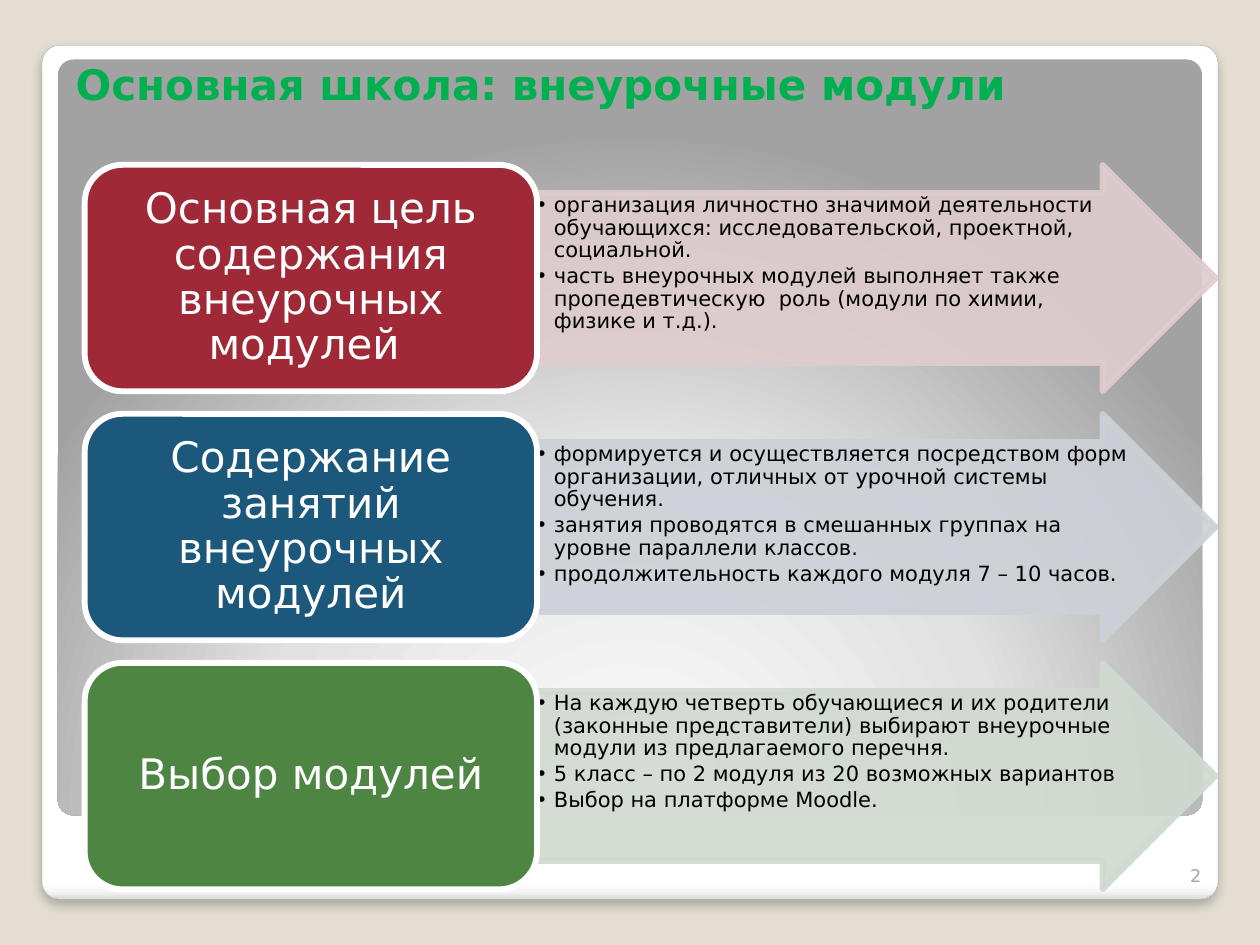
import dataclasses

import lxml.etree
import pptx
import pptx.dml.color
import pptx.enum.shapes
import pptx.enum.text
import pptx.oxml.ns
import pptx.util

Pt = pptx.util.Pt
KIND = pptx.enum.shapes.MSO_SHAPE
ALIGN = pptx.enum.text.PP_ALIGN
ANCHOR = pptx.enum.text.MSO_ANCHOR
qn = pptx.oxml.ns.qn


@dataclasses.dataclass
class Theme:
    font: str = "DejaVu Sans"
    back: str = "E3DED1"
    title: str = "00B050"
    ink: str = "000000"
    light: str = "FFFFFF"
    edge: str = "A4A4A4"
    faint: str = "A8A49B"
    large: int = 24
    small: int = 12
    tiny: int = 10
    stroke: float = 3.35
    card: tuple = ((0, "FFFFFF"), (98, "FFFFFF"), (99, "F7F7F7"), (100, "DADADA"))
    panel: tuple = ((0, "FFFFFF"), (55, "E1E1E1"), (100, "A2A2A2"))


def rgb(code):
    return pptx.dml.color.RGBColor.from_string(code)


def node(parent, tag, **attrs):
    child = lxml.etree.SubElement(parent, qn(tag))
    for key, value in attrs.items():
        child.set(key, str(value))
    return child


def write(frame, *lines, font, size, color, bold=False, align=ALIGN.LEFT,
          anchor=ANCHOR.TOP, inset=(7.2, 3.6), space=1, after=0, bullet=None, indent=0):
    """Fill a text frame with one paragraph for each line."""
    frame.word_wrap = True
    frame.auto_size = pptx.enum.text.MSO_AUTO_SIZE.NONE
    frame.vertical_anchor = anchor
    frame.margin_left = frame.margin_right = Pt(inset[0])
    frame.margin_top = frame.margin_bottom = Pt(inset[1])
    for index, line in enumerate(lines):
        para = frame.paragraphs[0] if index == 0 else frame.add_paragraph()
        if bullet:
            para.level = 1
            props = para._p.get_or_add_pPr()
            props.set("marL", str(Pt(indent)))
            props.set("indent", str(-Pt(indent)))
            node(props, "a:buChar", char=bullet)
        para.alignment = align
        para.line_spacing = space
        para.space_before = Pt(0)
        para.space_after = Pt(after)
        run = para.add_run()
        run.text = line
        run.font.name = font
        run.font.size = Pt(size)
        run.font.bold = bold
        run.font.color.rgb = rgb(color)


class Deck:
    def __init__(self, theme):
        self.theme = theme
        self.file = pptx.Presentation()
        self.file.slide_width, self.file.slide_height = Pt(720), Pt(540)
        # The comparison layout offers a title and several body holders
        self.slide = self.file.slides.add_slide(self.file.slide_layouts[4])
        self.slide.background.fill.solid()
        self.slide.background.fill.fore_color.rgb = rgb(theme.back)

    def shape(self, kind, area, fill=None, line=None, width=0, adjust=(), alpha=None):
        item = self.slide.shapes.add_shape(kind, *map(Pt, area))
        item.shadow.inherit = False
        for index, value in enumerate(adjust):
            item.adjustments[index] = value
        if fill:
            item.fill.solid()
            item.fill.fore_color.rgb = rgb(fill)
        else:
            item.fill.background()
        if line:
            item.line.color.rgb = rgb(line)
            item.line.width = Pt(width)
        else:
            item.line.fill.background()
        if alpha:
            for color in item._element.spPr.iter(qn("a:srgbClr")):
                node(color, "a:alpha", val=alpha * 1000)
        return item

    def blend(self, item, stops, focus=None):
        """Swap the empty fill for a gradient, downward or round a focus."""
        blank = item._element.spPr.find(qn("a:noFill"))
        grad = lxml.etree.Element(qn("a:gradFill"), rotWithShape="1")
        chain = node(grad, "a:gsLst")
        for place, code in stops:
            node(node(chain, "a:gs", pos=place * 1000), "a:srgbClr", val=code)
        if focus:
            shade = node(grad, "a:path", path="circle")
            sides = {side: value * 1000 for side, value in zip("ltrb", focus)}
            node(shade, "a:fillToRect", **sides)
        else:
            node(grad, "a:lin", ang=90 * 60000, scaled=0)
        blank.getparent().replace(blank, grad)

    def shadow(self, item, blur, drop, alpha):
        effects = item._element.spPr.find(qn("a:effectLst"))
        outer = node(effects, "a:outerShdw", blurRad=Pt(blur), dist=Pt(drop),
                     dir=90 * 60000, algn="t", rotWithShape=0)
        node(node(outer, "a:srgbClr", val=self.theme.ink), "a:alpha", val=alpha * 1000)

    def holder(self, index, area):
        """Move a placeholder to its area and to the front."""
        item = self.slide.placeholders[index]
        item.left, item.top, item.width, item.height = map(Pt, area)
        self.slide.shapes._spTree.append(item._element)
        return item.text_frame

    def title(self, text, area):
        write(self.holder(0, area), text, font=self.theme.font, size=self.theme.large,
              color=self.theme.title, bold=True, anchor=ANCHOR.BOTTOM)

    def list(self, index, lines, area):
        write(self.holder(index, area), *lines, font=self.theme.font,
              size=self.theme.small, color=self.theme.ink, inset=(0.6, 0.6),
              space=0.9, after=1.8, bullet="•", indent=9)

    def arrow(self, area, tint):
        self.shape(KIND.RIGHT_ARROW, area, tint, tint, self.theme.stroke, (0.75, 0.5), 90)

    def label(self, text, area, fill):
        item = self.shape(KIND.ROUNDED_RECTANGLE, area, fill, self.theme.light,
                          self.theme.stroke)
        write(item.text_frame, text, font=self.theme.font, size=self.theme.large,
              color=self.theme.light, align=ALIGN.CENTER, anchor=ANCHOR.MIDDLE, space=0.9)

    def number(self, text, area):
        box = self.slide.shapes.add_textbox(*map(Pt, area))
        write(box.text_frame, text, font=self.theme.font, size=self.theme.tiny,
              color=self.theme.faint, align=ALIGN.RIGHT, anchor=ANCHOR.BOTTOM)

    def save(self):
        for item in list(self.slide.placeholders):
            if not item.text_frame.text:
                item._element.getparent().remove(item._element)
        self.file.save("out.pptx")


ROWS = [
    ("Основная цель содержания внеурочных модулей ", "9F2936", "DFCDCE", [
        "организация личностно значимой деятельности обучающихся: "
        "исследовательской, проектной, социальной.",
        "часть внеурочных модулей выполняет также пропедевтическую  роль "
        "(модули по химии, физике и т.д.)."]),
    ("Содержание занятий внеурочных модулей", "1B587C", "CDD1D7", [
        "формируется и осуществляется посредством форм организации, "
        "отличных от урочной системы обучения.",
        "занятия проводятся в смешанных группах на уровне параллели классов.",
        "продолжительность каждого модуля 7 – 10 часов."]),
    ("Выбор модулей", "4E8542", "D0D9CF", [
        "На каждую четверть обучающиеся и их родители (законные представители) "
        "выбирают внеурочные модули из предлагаемого перечня.",
        "5 класс – по 2 модуля из 20 возможных вариантов",
        "Выбор на платформе Moodle."]),
]


def main():
    theme = Theme()
    deck = Deck(theme)

    # Card and shaded panel
    card = deck.shape(KIND.ROUNDED_RECTANGLE, (24, 25.9, 672, 488), line=theme.edge,
                      width=0.16, adjust=(0.021,))
    deck.blend(card, theme.card)
    deck.shadow(card, blur=6, drop=4, alpha=25)
    panel = deck.shape(KIND.ROUNDED_RECTANGLE, (33, 34, 654, 432), adjust=(0.021,))
    deck.blend(panel, theme.panel, focus=(50, 175, 50, -75))

    # Title and slide number
    deck.title("Основная школа: внеурочные модули", (36, 21.6, 648, 44))
    deck.number("2", (657.5, 481, 36, 28.8))

    # Rows: arrow, list, then the label over both
    left, middle, top, high, pitch = 48.4, 306.9, 94.2, 129.4, 142.3
    for index, (text, fill, tint, lines) in enumerate(ROWS):
        y = top + index * pitch
        deck.arrow((middle, y, 387.8, high), tint)
        deck.list(index + 1, lines, (middle, y + high / 8, 339.3, high * 0.75))
        deck.label(text, (left, y, middle - left, high), fill)

    deck.save()


if __name__ == "__main__":
    main()
